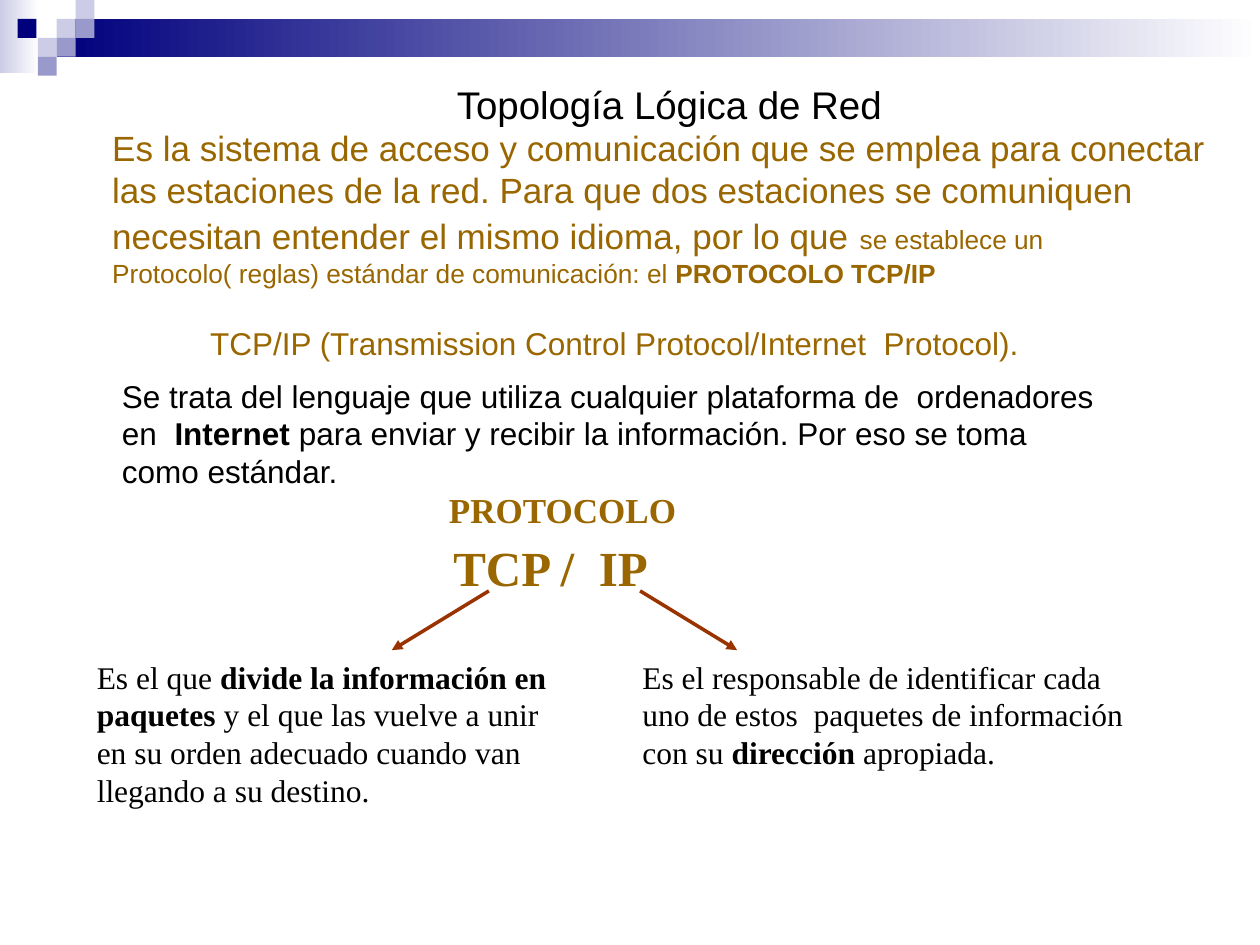
"""Build the slide on logical network topology and the TCP/IP protocol."""
from lxml import etree
from pptx import Presentation
from pptx.dml.color import RGBColor
from pptx.enum import shapes, text
from pptx.oxml import ns
from pptx.util import Inches, Pt

COLORS = {"navy": "00007D", "lilac": "CCCCE6", "violet": "9999CC", "white": "FFFFFF",
          "ochre": "996600", "rust": "993300", "black": "000000"}
SERIF = "Times New Roman"
TILE = 0.15

BANDS = [((0, 0, 0.31, 0.58), "lilac"), ((0.45, 0.15, 9.55, 0.3), "navy")]
TILES = [(3, 1, "lilac"), (4, 0, "lilac"), (4, 1, "violet"), (2, 2, "lilac"),
         (0.93, 1, "navy"), (3, 2, "violet"), (2, 3, "violet")]

TOPOLOGY = [
    [("Topología Lógica de Red ", {"size": 22, "color": "black"})],
    [("Es la sistema de acceso y comunicación que se emplea para conectar las "
      "estaciones de la red. Para que dos estaciones se comuniquen necesitan "
      "entender el mismo idioma, por lo que", {"size": 20}),
     (" ", {"size": 22}),
     ("se establece un Protocolo( reglas) estándar de comunicación: el ", {"size": 15}),
     ("PROTOCOLO TCP/IP", {"size": 15, "bold": True})],
]
BOLD = {"bold": True}
TEXTS = [
    ((1.57, 2.52, 6.8, 0.4),
     [("TCP/IP (Transmission Control Protocol/Internet  Protocol).", {})],
     {"color": "ochre", "wrap": False}),
    ((0.87, 2.94, 8.03, 1),
     [("Se trata del lenguaje que utiliza cualquier plataforma de  ordenadores en  ", {}),
      ("Internet", BOLD),
      (" para enviar y recibir la información. Por eso se toma como estándar.", {})], {}),
    ((3.5, 4.22, 2.04, 0.57), [("TCP /  IP", BOLD)],
     {"font": SERIF, "size": 28, "color": "ochre"}),
    ((0.67, 5.17, 3.86, 1.3),
     [("Es el que ", {}), ("divide la información en paquetes", BOLD),
      (" y el que las vuelve a unir  en su orden adecuado cuando van llegando "
       "a su destino.", {})], {"font": SERIF}),
    ((5, 5.17, 4.17, 1),
     [("Es el responsable de identificar cada uno de estos  paquetes de información "
       "con su ", {}), ("dirección", BOLD), (" apropiada.", {})], {"font": SERIF}),
    ((2.95, 3.83, 3.03, 0.43), [("PROTOCOLO", BOLD)],
     {"font": SERIF, "size": 20, "color": "ochre", "aligns": ["CENTER"]}),
]
ARROWS = [(3.88, 3.11), (5.08, 5.85)]
ARROW_TOP, ARROW_BOTTOM = 4.69, 5.16


def rgb(name):
    """Return the named colour."""
    return RGBColor.from_string(COLORS[name])


def place(shape, box):
    """Move and size a shape in inches."""
    shape.left, shape.top, shape.width, shape.height = map(Inches, box)


def write(frame, paragraphs, font="Arial", size=18, color="black", wrap=True,
          aligns=("LEFT",)):
    """Fill a text frame with paragraphs of formatted runs."""
    frame.word_wrap = wrap
    frame.auto_size = text.MSO_AUTO_SIZE.NONE
    frame.vertical_anchor = text.MSO_ANCHOR.TOP
    for index, runs in enumerate(paragraphs):
        paragraph = frame.paragraphs[0] if index == 0 else frame.add_paragraph()
        paragraph.alignment = getattr(text.PP_ALIGN, aligns[index])
        for words, style in runs:
            run = paragraph.add_run()
            run.text = words
            run.font.name = font
            run.font.size = Pt(style.get("size", size))
            run.font.bold = style.get("bold", False)
            run.font.color.rgb = rgb(style.get("color", color))


def add_block(slide, box, color, fade=False):
    """Add a borderless rectangle, solid or fading from white."""
    block = slide.shapes.add_shape(shapes.MSO_SHAPE.RECTANGLE, *map(Inches, box))
    block.shadow.inherit = False
    block.line.fill.background()
    if fade:
        block.fill.gradient()
        block.fill.gradient_angle = 180
        for stop, name in zip(block.fill.gradient_stops, ("white", color)):
            stop.color.rgb = rgb(name)
    else:
        block.fill.solid()
        block.fill.fore_color.rgb = rgb(color)


def add_arrow(slide, start_x, end_x):
    """Add an arrow from the protocol name down to its explanation."""
    arrow = slide.shapes.add_connector(
        shapes.MSO_CONNECTOR.STRAIGHT,
        *map(Inches, (start_x, ARROW_TOP, end_x, ARROW_BOTTOM)))
    arrow.line.color.rgb = rgb("rust")
    arrow.line.width = Pt(2)
    etree.SubElement(arrow.line._get_or_add_ln(), ns.qn("a:tailEnd"), type="triangle")
    etree.SubElement(arrow._element.spPr, ns.qn("a:effectLst"))


def main():
    """Compose and save the slide."""
    deck = Presentation()
    deck.slide_width, deck.slide_height = Inches(10), Inches(7.5)
    slide = deck.slides.add_slide(deck.slide_layouts[5])
    for box, color in BANDS:
        add_block(slide, box, color, fade=True)
    for column, row, color in TILES:
        add_block(slide, (column * TILE, row * TILE, TILE, TILE), color)
    topology = slide.shapes.title
    place(topology, (0.79, 0.59, 9.13, 1.3))
    write(topology.text_frame, TOPOLOGY, color="ochre", aligns=("CENTER", "LEFT"))
    for box, runs, style in TEXTS:
        label = slide.shapes.add_textbox(*map(Inches, box))
        write(label.text_frame, [runs], **style)
    for start_x, end_x in ARROWS:
        add_arrow(slide, start_x, end_x)
    deck.save("out.pptx")


if __name__ == "__main__":
    main()
